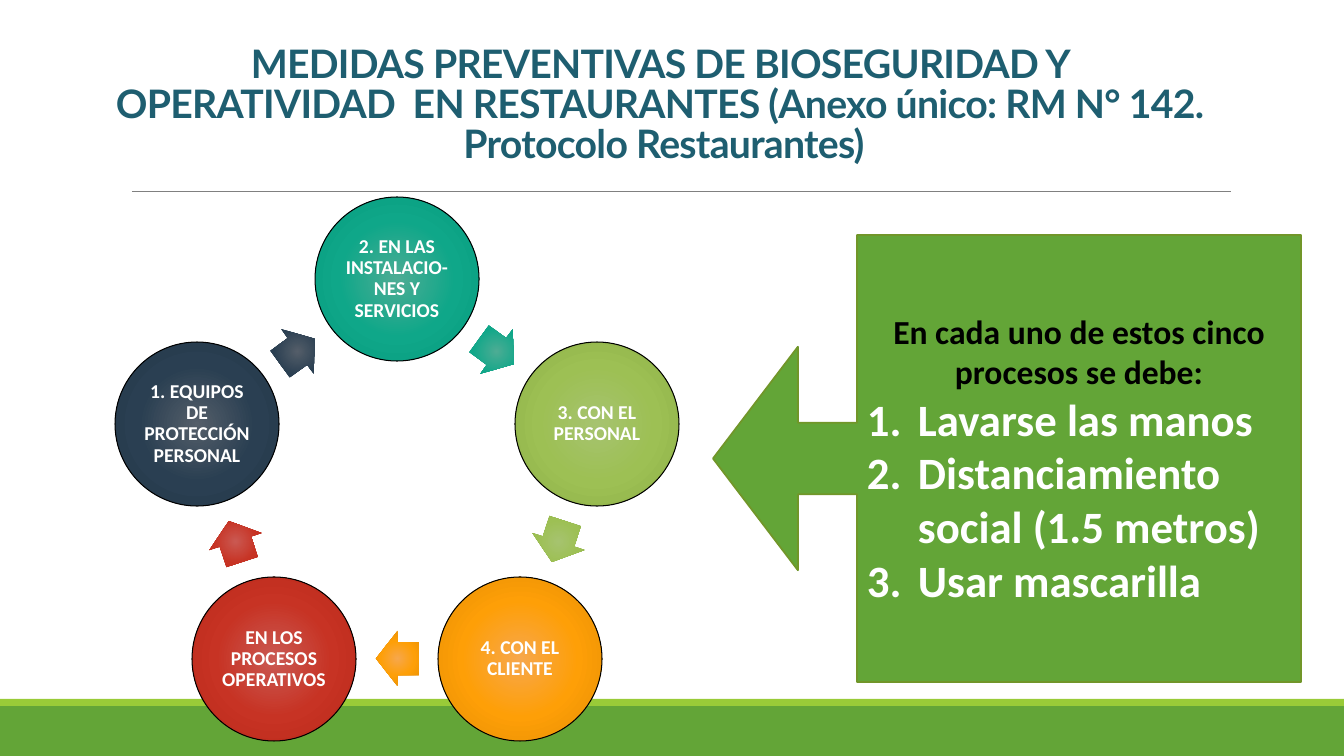
"""Build the slide on biosafety measures in restaurants."""
import math

import pptx
import pptx.dml.color
import pptx.enum.shapes
import pptx.enum.text
import pptx.oxml
import pptx.oxml.ns
import pptx.util

TITLE = ("MEDIDAS PREVENTIVAS DE BIOSEGURIDAD Y OPERATIVIDAD  EN RESTAURANTES "
         "(Anexo único: RM N° 142.  Protocolo Restaurantes)")
PROCESSES = [
    ("2. EN LAS INSTALACIO-NES Y SERVICIOS", ("4DAC94", "0FA789", "079A7E")),
    ("3. CON EL PERSONAL", ("A6C36F", "9DC054", "8DB045")),
    ("4. CON EL CLIENTE", ("F7A74C", "FE9F07", "E58E03")),
    ("EN LOS PROCESOS OPERATIVOS", ("CA5952", "C73324", "B82819")),
    ("1. EQUIPOS DE PROTECCIÓN PERSONAL", ("545E69", "2A3F52", "24384A")),
]
CALLOUT_HEADING = "En cada uno de estos cinco procesos se debe:"
CALLOUT_STEPS = ["Lavarse las manos", "Distanciamiento social (1.5 metros)", "Usar mascarilla"]
BARS = [((0, 706, 1344, 50), "63A537"), ((0, 699, 1344, 7), "99CB38")]

SCALE = 914400 / 100.8
RING_X, RING_Y, RING_RADIUS = 397, 489, 210
CIRCLE_SIZE = 164
ARROW_WIDTH, ARROW_HEIGHT = 43, 55
SHAPES = pptx.enum.shapes.MSO_SHAPE
ANCHORS = pptx.enum.text.MSO_ANCHOR
CENTER = pptx.enum.text.PP_ALIGN.CENTER
NAMESPACE = pptx.oxml.ns.nsdecls("a")


def px(*lengths):
    return [round(length * SCALE) for length in lengths]


def color(text):
    return pptx.dml.color.RGBColor.from_string(text)


def add_shape(slide, kind, place, fill=None, line=None, line_width=1):
    shape = slide.shapes.add_shape(kind, *px(*place))
    shape.shadow.inherit = False
    if fill:
        shape.fill.solid()
        shape.fill.fore_color.rgb = color(fill)
    if line:
        shape.line.color.rgb = color(line)
        shape.line.width = pptx.util.Pt(line_width)
    else:
        shape.line.fill.background()
    return shape


def fill_radial(shape, shades):
    stops = "".join(
        f'<a:gs pos="{index * 50000}"><a:srgbClr val="{shade}"/></a:gs>'
        for index, shade in enumerate(shades))
    gradient = pptx.oxml.parse_xml(
        f'<a:gradFill {NAMESPACE} rotWithShape="1"><a:gsLst>{stops}</a:gsLst>'
        '<a:path path="circle"><a:fillToRect l="50000" t="50000" r="50000" b="50000"/>'
        '</a:path></a:gradFill>')
    shape.element.spPr.find(pptx.oxml.ns.qn("a:prstGeom")).addnext(gradient)


def format_paragraph(para, size, hue, font="Calibri", align=None, spacing=None):
    para.alignment = align
    para.line_spacing = spacing
    for span in para.runs:
        span.font.name = font
        span.font.size = pptx.util.Pt(size)
        span.font.bold = True
        span.font.color.rgb = color(hue)


def add_title(slide):
    box = slide.shapes.add_textbox(*px(105, 47, 1109, 124))
    frame = box.text_frame
    frame.word_wrap = True
    frame.vertical_anchor = ANCHORS.BOTTOM
    frame.text = TITLE
    para = frame.paragraphs[0]
    format_paragraph(para, 28, "1E5E70", "Lato", CENTER, 0.85)
    para.runs[0].font._element.set("spc", "-50")


def add_rule(slide):
    rule = slide.shapes.add_connector(
        pptx.enum.shapes.MSO_CONNECTOR.STRAIGHT, *px(132, 191, 1231, 191))
    rule.line.color.rgb = color("808080")
    rule.line.width = pptx.util.Pt(0.5)
    rule.element.spPr.append(pptx.oxml.parse_xml(f"<a:effectLst {NAMESPACE}/>"))


def add_callout(slide):
    callout = add_shape(slide, SHAPES.LEFT_ARROW_CALLOUT, (713, 235, 588, 447),
                        "63A537", "719629", 1.25)
    for index, value in enumerate((0.16, 0.25, 0.19, 0.755)):
        callout.adjustments[index] = value
    frame = callout.text_frame
    frame.word_wrap = True
    frame.vertical_anchor = ANCHORS.MIDDLE
    frame.text = "\n".join([CALLOUT_HEADING] + CALLOUT_STEPS)
    heading, *steps = frame.paragraphs
    format_paragraph(heading, 24, "000000", align=CENTER)
    indent = px(51)[0]
    for para in steps:
        format_paragraph(para, 32, "FFFFFF", align=pptx.enum.text.PP_ALIGN.LEFT)
        properties = para._p.get_or_add_pPr()
        properties.set("marL", str(indent))
        properties.set("indent", str(-indent))
        properties.append(pptx.oxml.parse_xml(
            f'<a:buAutoNum {NAMESPACE} type="arabicPeriod"/>'))


def ring_place(angle, radius, width, height):
    turn = math.radians(angle)
    return (round(RING_X + radius * math.sin(turn) - width / 2),
            round(RING_Y - radius * math.cos(turn) - height / 2), width, height)


def add_cycle(slide):
    step = 360 / len(PROCESSES)
    arrow_radius = RING_RADIUS * math.cos(math.radians(step / 2))
    for index, (label, shades) in enumerate(PROCESSES):
        angle = index * step
        circle = add_shape(slide, SHAPES.OVAL,
                           ring_place(angle, RING_RADIUS, CIRCLE_SIZE, CIRCLE_SIZE),
                           line="000000", line_width=0.75)
        fill_radial(circle, shades)
        frame = circle.text_frame
        frame.word_wrap = True
        frame.vertical_anchor = ANCHORS.MIDDLE
        frame.margin_left, frame.margin_top, frame.margin_right, frame.margin_bottom = px(2, 2, 2, 2)
        frame.text = label
        format_paragraph(frame.paragraphs[0], 14, "FFFFFF", align=CENTER, spacing=0.9)

        arrow_angle = angle + step / 2
        arrow = add_shape(slide, SHAPES.RIGHT_ARROW,
                          ring_place(arrow_angle, arrow_radius, ARROW_WIDTH, ARROW_HEIGHT))
        arrow.adjustments[0] = 0.6
        arrow.adjustments[1] = 0.5
        arrow.rotation = arrow_angle
        fill_radial(arrow, shades)


def main():
    deck = pptx.Presentation()
    deck.slide_width, deck.slide_height = px(1344, 756)
    page = deck.slides.add_slide(deck.slide_layouts[6])
    for place, fill in BARS:
        add_shape(page, SHAPES.RECTANGLE, place, fill)
    add_rule(page)
    add_title(page)
    add_callout(page)
    add_cycle(page)
    deck.save("out.pptx")


if __name__ == "__main__":
    main()
